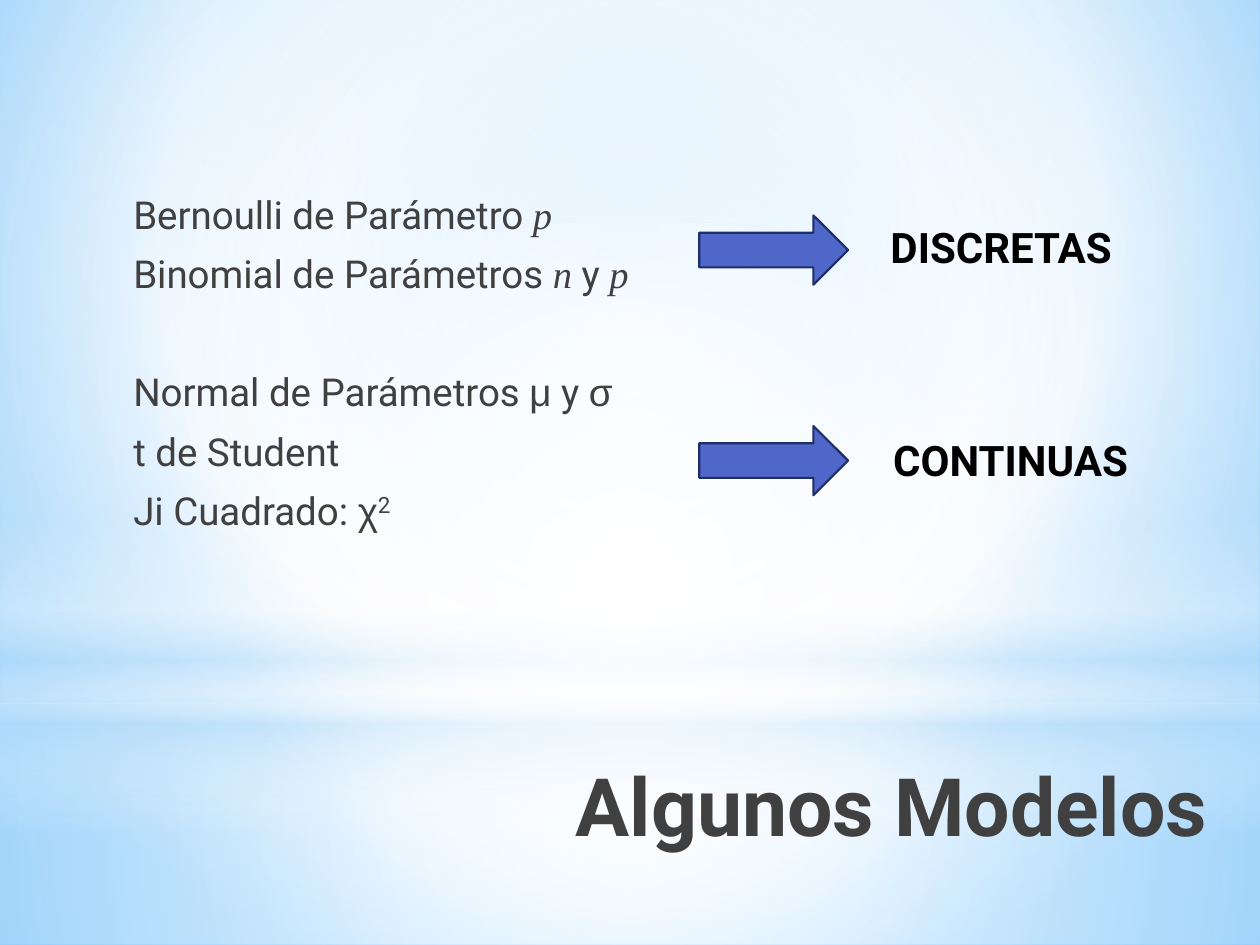
import pptx
import pptx.util
import pptx.oxml
import pptx.oxml.ns
import pptx.dml.color
import pptx.enum.shapes
import pptx.enum.text

Pt = pptx.util.Pt
SHAPES = pptx.enum.shapes.MSO_SHAPE
ALIGN = pptx.enum.text.PP_ALIGN

COLOURS = {
    "white": "FFFFFF",
    "sky": "9ED5FF",
    "deep_sky": "5BB9FF",
    "haze": "B4DCFA",
    "text": "404040",
    "label": "000000",
    "arrow": "4E67C8",
    "arrow_edge": "1F2E69",
}
CENTRE = (50, 50, 50, 50)


def colour(name):
    return pptx.dml.color.RGBColor.from_string(COLOURS[name])


def add_text(paragraph, text, font="Roboto", size=22, fill="text", bold=False, italic=False, raised=False):
    run = paragraph.add_run()
    run.text = text
    run.font.name = font
    run.font.size = Pt(size)
    run.font.bold = bold
    run.font.italic = italic
    run.font.color.rgb = colour(fill)
    if raised:
        run.font._element.set("baseline", "30000")


def set_gradient(element, stops, focus=None):
    stop_xml = "".join(
        f'<a:gs pos="{position * 1000}"><a:srgbClr val="{COLOURS[name]}">'
        f'<a:alpha val="{opacity * 1000}"/></a:srgbClr></a:gs>'
        for position, name, opacity in stops
    )
    if focus:
        sides = " ".join(f'{side}="{value * 1000}"' for side, value in zip("ltrb", focus))
        direction = f'<a:path path="circle"><a:fillToRect {sides}/></a:path>'
    else:
        direction = '<a:lin ang="5400000" scaled="0"/>'
    gradient = pptx.oxml.parse_xml(
        f'<a:gradFill {pptx.oxml.ns.nsdecls("a")} rotWithShape="1">'
        f"<a:gsLst>{stop_xml}</a:gsLst>{direction}</a:gradFill>"
    )
    solid = element.find(".//" + pptx.oxml.ns.qn("a:solidFill"))
    solid.getparent().replace(solid, gradient)


class SlideBuilder:
    def __init__(self, slide):
        self.slide = slide

    def background(self, stops, focus):
        self.slide.background.fill.solid()
        set_gradient(self.slide.element, stops, focus)

    def shape(self, kind, left, top, width, height, fill):
        shape = self.slide.shapes.add_shape(kind, Pt(left), Pt(top), Pt(width), Pt(height))
        shape.shadow.inherit = False
        shape.fill.solid()
        shape.fill.fore_color.rgb = colour(fill)
        return shape

    def glow(self, kind, top, height, stops, focus=None):
        shape = self.shape(kind, 0, top, 720, height, "white")
        shape.line.fill.background()
        set_gradient(shape._element.spPr, stops, focus)

    def arrow(self, left, top):
        shape = self.shape(SHAPES.RIGHT_ARROW, left, top, 85, 39.6, "arrow")
        shape.line.color.rgb = colour("arrow_edge")
        shape.line.width = Pt(1.25)

    def text_box(self, left, top, width, height):
        frame = self.slide.shapes.add_textbox(Pt(left), Pt(top), Pt(width), Pt(height)).text_frame
        frame.word_wrap = True
        return frame

    def line(self, left, top, width, height, text, align=ALIGN.LEFT, **style):
        paragraph = self.text_box(left, top, width, height).paragraphs[0]
        paragraph.alignment = align
        add_text(paragraph, text, bold=True, **style)

    def groups(self, left, top, width, height, groups, gap):
        frame = self.text_box(left, top, width, height)
        paragraph = None
        for group in groups:
            for index, runs in enumerate(group):
                extra = gap if paragraph is not None and index == 0 else 0
                paragraph = frame.paragraphs[0] if paragraph is None else frame.add_paragraph()
                paragraph.space_before = Pt(4.4 + extra)
                paragraph.space_after = Pt(3)
                paragraph._p.get_or_add_pPr().set("marL", str(Pt(3.6)))
                for text, style in runs:
                    add_text(paragraph, text, **style)


def main():
    presentation = pptx.Presentation()
    presentation.slide_width = Pt(720)
    presentation.slide_height = Pt(540)
    builder = SlideBuilder(presentation.slides.add_slide(presentation.slide_layouts[6]))

    builder.background([(0, "sky", 100), (60, "white", 100), (100, "deep_sky", 100)], (20, 10, 20, 60))
    builder.glow(SHAPES.RECTANGLE, 401.8, 138.2,
                 [(0, "white", 91), (37, "white", 76), (100, "haze", 79)], CENTRE)
    builder.glow(SHAPES.RECTANGLE, 0, 401.8,
                 [(0, "white", 89), (48, "white", 62), (100, "haze", 79)], CENTRE)
    builder.glow(SHAPES.RECTANGLE, 296.6, 180,
                 [(0, "white", 0), (29, "white", 30), (45, "haze", 40),
                  (55, "white", 26), (65, "haze", 60), (100, "white", 0)])
    builder.glow(SHAPES.OVAL, 126, 401.8, [(0, "white", 100), (56, "white", 0)], CENTRE)

    builder.line(184.3, 428.4, 512.6, 90, "Algunos Modelos", align=ALIGN.RIGHT, size=46)

    plain = {}
    variable = {"font": "Times New Roman", "italic": True}
    greek = {"font": "Arial"}
    discrete = [
        [("Bernoulli de Parámetro ", plain), ("p", variable)],
        [("Binomial de Parámetros ", plain), ("n", variable), (" y ", plain), ("p", variable)],
    ]
    continuous = [
        [("Normal de Parámetros ", plain), ("μ", greek), (" y ", plain), ("σ", greek)],
        [("t de Student", plain)],
        [("Ji Cuadrado: ", plain), ("χ", greek), ("2", {"raised": True})],
    ]
    builder.groups(65.5, 105.8, 595.4, 306, [discrete, continuous], gap=33.6)

    for top in (123.1, 243.4):
        builder.arrow(399.6, top)
    for left, top, text in ((501.8, 123.1, "DISCRETAS"), (503.3, 244.8, "CONTINUAS")):
        builder.line(left, top, 158.4, 36, text, size=24, fill="label")

    presentation.save("out.pptx")


if __name__ == "__main__":
    main()
